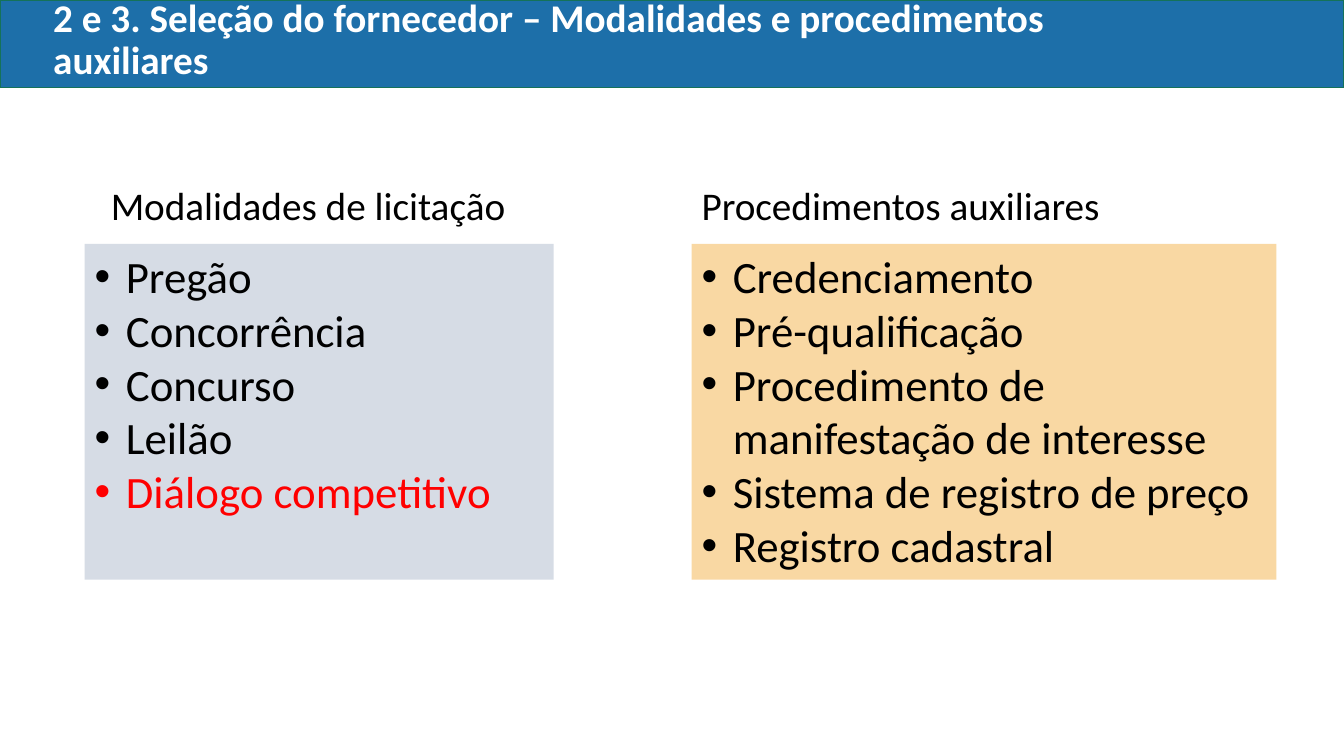
from lxml.etree import SubElement
from pptx import Presentation
from pptx.dml.color import RGBColor
from pptx.enum.shapes import MSO_SHAPE
from pptx.enum.text import MSO_ANCHOR, PP_ALIGN
from pptx.oxml.ns import qn
from pptx.util import Inches, Pt

COLORS = {
    "bar": "1D6FA9", "edge": "157259", "gray": "D6DCE5", "sand": "F9D8A3",
    "white": "FFFFFF", "black": "000000", "red": "FF0000",
}


class Deck:
    font = "Calibri"
    indent = Inches(0.31)

    def __init__(self, slide):
        self.slide = slide

    def color(self, name):
        return RGBColor.from_string(COLORS[name])

    def style(self, para, text, size, color, bold=False):
        para.text = text
        para.alignment = PP_ALIGN.LEFT
        para.font.name = self.font
        para.font.size = Pt(size)
        para.font.bold = bold
        para.font.color.rgb = self.color(color)

    def rect(self, box, fill, line=None):
        shape = self.slide.shapes.add_shape(MSO_SHAPE.RECTANGLE, *map(Inches, box))
        shape.shadow.inherit = False
        shape.fill.solid()
        shape.fill.fore_color.rgb = self.color(fill)
        if line:
            shape.line.color.rgb = self.color(line)
            shape.line.width = Pt(1)
        else:
            shape.line.fill.background()
        return shape

    def label(self, box, text, color="black", bold=False, anchor=MSO_ANCHOR.TOP):
        frame = self.slide.shapes.add_textbox(*map(Inches, box)).text_frame
        frame.word_wrap = True
        frame.vertical_anchor = anchor
        para = frame.paragraphs[0]
        self.style(para, text, 28, color, bold)
        return para

    def bullets(self, box, fill, items, marked=()):
        frame = self.rect(box, fill).text_frame
        frame.word_wrap = True
        frame.vertical_anchor = MSO_ANCHOR.TOP
        for num, item in enumerate(items):
            para = frame.add_paragraph() if num else frame.paragraphs[0]
            self.style(para, item, 32, "red" if item in marked else "black")
            props = para._p.get_or_add_pPr()
            props.set("marL", str(self.indent))
            props.set("indent", str(-self.indent))
            # Bullet elements go before the default run style
            run = props.find(qn("a:defRPr"))
            face = SubElement(props, qn("a:buFont"), typeface="Arial")
            mark = SubElement(props, qn("a:buChar"), char="•")
            if run is not None:
                run.addprevious(face)
                run.addprevious(mark)


def main():
    prs = Presentation()
    prs.slide_width, prs.slide_height = Inches(13.33), Inches(7.5)
    deck = Deck(prs.slides.add_slide(prs.slide_layouts[6]))

    # Title bar
    deck.rect((0, 0, 13.33, 0.87), "bar", "edge")
    title = deck.label(
        (0.43, 0, 11.5, 0.81),
        "2 e 3. Seleção do fornecedor – Modalidades e procedimentos auxiliares",
        "white", True, MSO_ANCHOR.MIDDLE)
    title.line_spacing = 0.9

    # Two headed lists
    top, high = 2.42, 3.33
    deck.bullets(
        (0.84, top, 4.65, high), "gray",
        ["Pregão", "Concorrência", "Concurso", "Leilão", "Diálogo competitivo"],
        marked=["Diálogo competitivo"])
    deck.bullets(
        (6.86, top, 5.8, high), "sand",
        ["Credenciamento", "Pré-qualificação",
         "Procedimento de manifestação de interesse",
         "Sistema de registro de preço", "Registro cadastral"])
    for left, text in ((1, "Modalidades de licitação"),
                       (6.86, "Procedimentos auxiliares")):
        deck.label((left, 1.75, 4.49, 0.57), text)

    prs.save("out.pptx")


if __name__ == "__main__":
    main()
